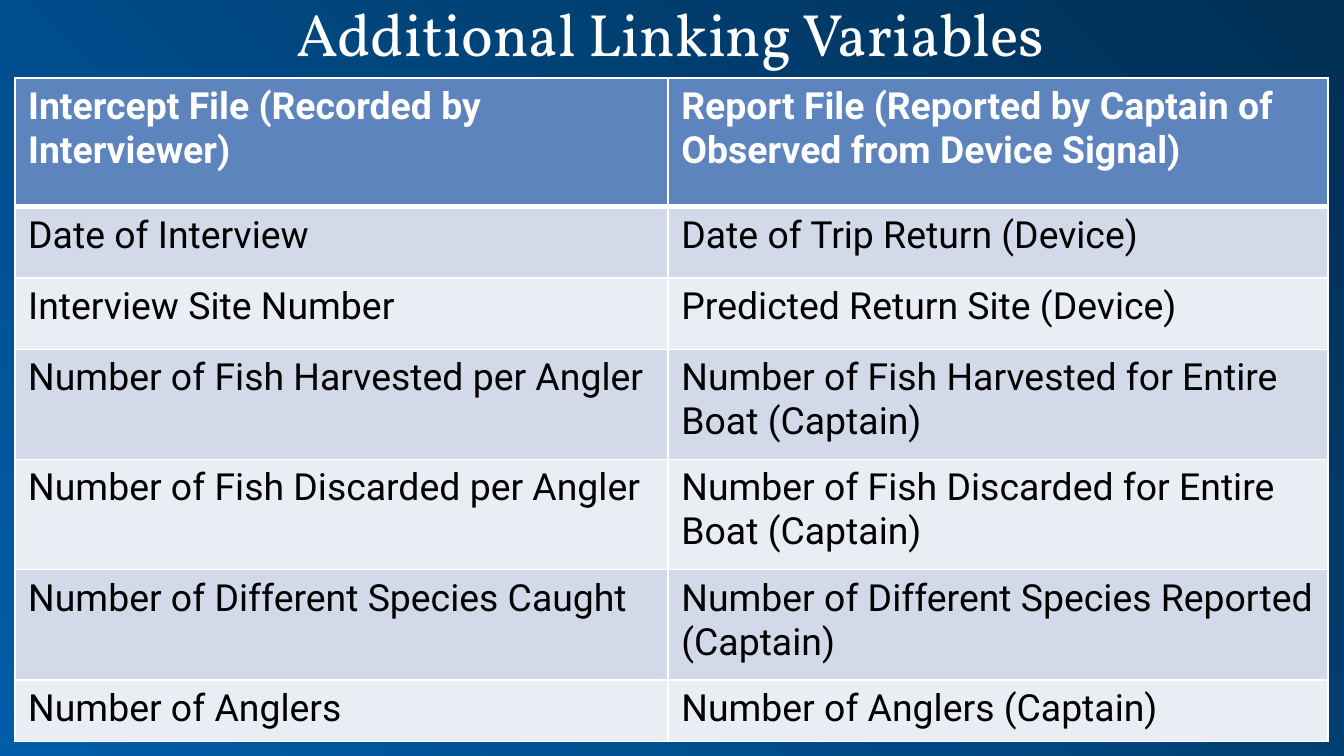
from lxml.etree import SubElement
from pptx import Presentation
from pptx.dml.color import RGBColor
from pptx.enum.text import MSO_ANCHOR, PP_ALIGN
from pptx.oxml.ns import qn
from pptx.util import Inches, Pt

NAVY = RGBColor(0x00, 0x2F, 0x54)
BLUE = RGBColor(0x00, 0x5D, 0xA9)
HEADER_BLUE = RGBColor(0x5E, 0x84, 0xBE)
BAND_DARK = RGBColor(0xD2, 0xD9, 0xE8)
BAND_LIGHT = RGBColor(0xEA, 0xED, 0xF4)
WHITE = RGBColor(0xFF, 0xFF, 0xFF)
BLACK = RGBColor(0x00, 0x00, 0x00)

COLUMN_WIDTHS = (4.86, 4.91)
ROW_HEIGHTS = (0.96, 0.53, 0.53, 0.82, 0.82, 0.82, 0.46)
VARIABLES = (
    ("Intercept File (Recorded by Interviewer)",
     "Report File (Reported by Captain of Observed from Device Signal)"),
    ("Date of Interview", "Date of Trip Return (Device)"),
    ("Interview Site Number", "Predicted Return Site (Device)"),
    ("Number of Fish Harvested per Angler",
     "Number of Fish Harvested for Entire Boat (Captain)"),
    ("Number of Fish Discarded per Angler",
     "Number of Fish Discarded for Entire Boat (Captain)"),
    ("Number of Different Species Caught",
     "Number of Different Species Reported (Captain)"),
    ("Number of Anglers", "Number of Anglers (Captain)"),
)


def write_text(frame, text, font="Roboto", size=20, color=BLACK, bold=False,
               align=PP_ALIGN.LEFT, line_spacing=None):
    frame.word_wrap = True
    para = frame.paragraphs[0]
    para.alignment = align
    para.line_spacing = line_spacing
    span = para.add_run()
    span.text = text
    span.font.name = font
    span.font.size = Pt(size)
    span.font.color.rgb = color
    span.font.bold = bold


def set_borders(cell, color, left=1, right=1, top=1, bottom=1):
    """Draw the four cell edges, with widths in points; call before filling."""
    properties = cell._tc.get_or_add_tcPr()
    for side, width in zip("LRTB", (left, right, top, bottom)):
        line = SubElement(properties, qn(f"a:ln{side}"), w=str(Pt(width)))
        fill = SubElement(line, qn("a:solidFill"))
        SubElement(fill, qn("a:srgbClr"), val=str(color))


def paint_background(page):
    fill = page.background.fill
    fill.gradient()
    fill.gradient_angle = 225
    for stop, color in zip(fill.gradient_stops, (NAVY, BLUE)):
        stop.color.rgb = color


def add_title(page, left, top, width, height):
    box = page.shapes.add_textbox(Inches(left), Inches(top), Inches(width), Inches(height))
    box.text_frame.vertical_anchor = MSO_ANCHOR.MIDDLE
    write_text(box.text_frame, "Additional Linking Variables", font="Vollkorn",
               size=32, color=WHITE, align=PP_ALIGN.CENTER, line_spacing=0.9)


def add_variable_table(page, left, top):
    table = page.shapes.add_table(
        len(ROW_HEIGHTS), len(COLUMN_WIDTHS), Inches(left), Inches(top),
        Inches(sum(COLUMN_WIDTHS)), Inches(sum(ROW_HEIGHTS))).table
    for column, width in zip(table.columns, COLUMN_WIDTHS):
        column.width = Inches(width)
    for index, (row, height, texts) in enumerate(zip(table.rows, ROW_HEIGHTS, VARIABLES)):
        row.height = Inches(height)
        header = index == 0
        band = HEADER_BLUE if header else BAND_DARK if index % 2 else BAND_LIGHT
        for cell, text in zip(row.cells, texts):
            set_borders(cell, WHITE, top=3 if index == 1 else 1, bottom=3 if header else 1)
            cell.fill.solid()
            cell.fill.fore_color.rgb = band
            write_text(cell.text_frame, text, color=WHITE if header else BLACK, bold=header)


def main():
    deck = Presentation()
    deck.slide_width = Inches(10)
    deck.slide_height = deck.slide_width * 9 // 16
    page = deck.slides.add_slide(deck.slide_layouts[6])
    paint_background(page)
    add_title(page, 0.31, -0.06, 9.36, 0.67)
    add_variable_table(page, 0.11, 0.58)
    deck.save("out.pptx")


if __name__ == "__main__":
    main()
